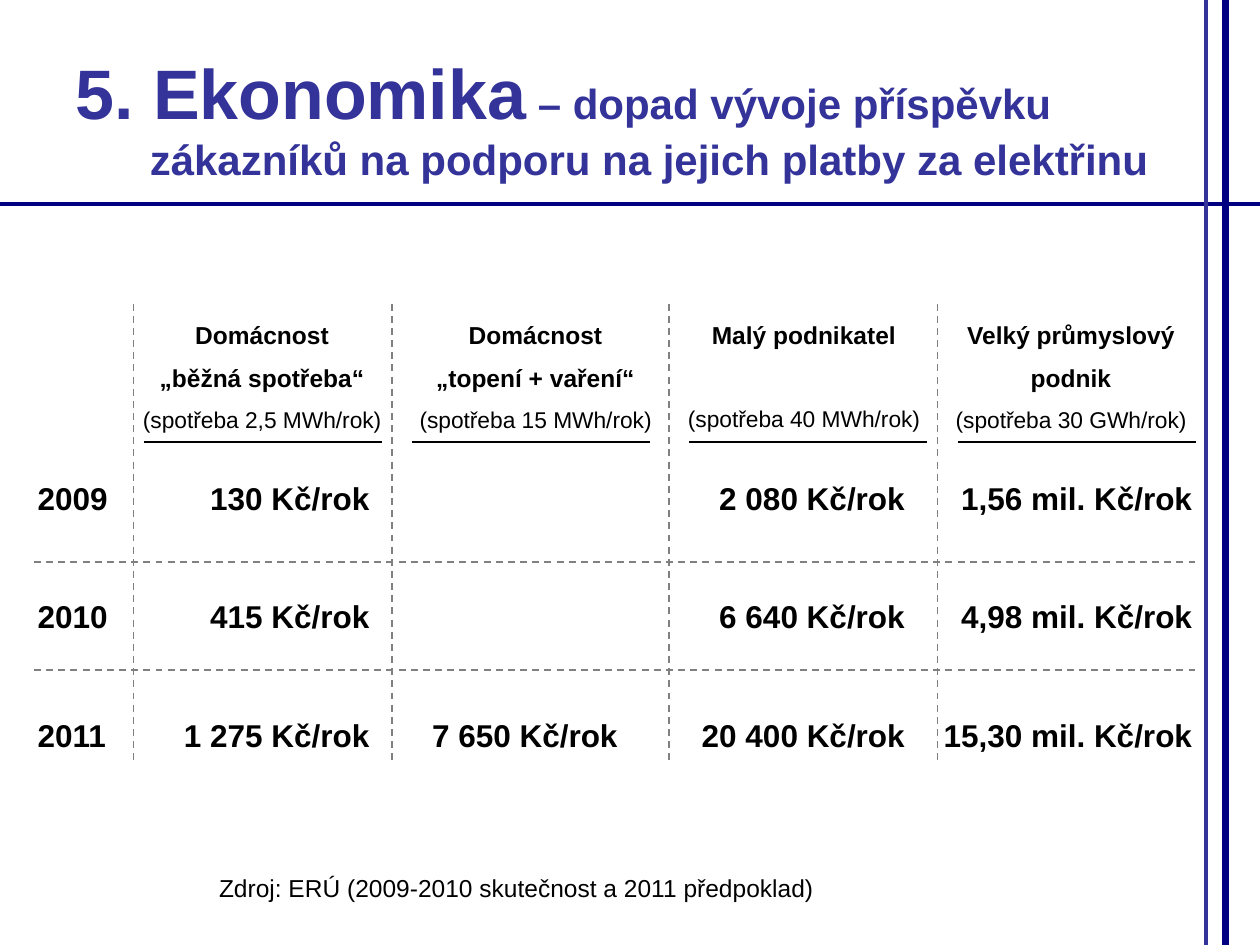
"""Build the slide on how support payments change customers' electricity bills."""
from pptx import Presentation
from pptx.dml.color import RGBColor as RGB
from pptx.enum.dml import MSO_LINE as Dash
from pptx.enum.shapes import MSO_CONNECTOR as Conn
from pptx.enum.text import MSO_ANCHOR as Anchor, PP_ALIGN as Align
from pptx.oxml.ns import qn
from pptx.util import Inches, Pt
from lxml.etree import SubElement

HUES = {"navy": "000080", "blue": "333399", "black": "000000", "gray": "808080"}

deck = Presentation()
deck.slide_width, deck.slide_height = Inches(10), Inches(7.5)
slide = deck.slides.add_slide(deck.slide_layouts[6])


def rule(x1, y1, x2, y2, hue, width=1, dash=None):
    line = slide.shapes.add_connector(Conn.STRAIGHT, *map(Inches, (x1, y1, x2, y2)))
    line.line.color.rgb = RGB.from_string(HUES[hue])
    line.line.width = Pt(width)
    if dash:
        line.line.dash_style = dash
    SubElement(line._element.spPr, qn("a:effectLst"))


def label(x, y, w, h, paras, align=Align.LEFT, hue="black"):
    frame = slide.shapes.add_textbox(*map(Inches, (x, y, w, h))).text_frame
    frame.word_wrap = True
    for i, (runs, gap) in enumerate(paras):
        para = frame.paragraphs[0] if i == 0 else frame.add_paragraph()
        para.alignment = align
        if gap:
            para.space_before = Pt(gap)
        for text, size, bold in runs:
            run = para.add_run()
            run.text = text
            form = {"name": "Arial", "size": Pt(size), "bold": bold}
            for key, value in form.items():
                setattr(run.font, key, value)
            run.font.color.rgb = RGB.from_string(HUES[hue])
    return frame


rule(0, 1.62, 10, 1.62, "navy", 2.5)
rule(9.57, 0, 9.57, 7.5, "blue", 2.5)
rule(9.73, 0, 9.73, 7.5, "navy", 4)

source = "Zdroj: ERÚ (2009-2010 skutečnost a 2011 předpoklad)"
label(1.64, 6.88, 7.93, 0.33, [([(source, 14, False)], 0)])

topic = " – dopad vývoje příspěvku zákazníků na podporu na jejich platby za elektřinu"
title = label(0.5, 0.3, 8.99, 1.25,
              [([("5. Ekonomika", 40, True), (topic, 24, True)], 0)], hue="blue")
title.vertical_anchor = Anchor.MIDDLE
props = title.paragraphs[0]._p.get_or_add_pPr()
props.set("marL", str(Inches(0.59)))
props.set("indent", str(-Inches(0.59)))

heads = [
    (0.98, 2.2, 1.14, ["Domácnost", "„běžná spotřeba“"], "2,5 MWh"),
    (3.11, 2.28, 3.27, ["Domácnost", "„topení + vaření“"], "15 MWh"),
    (5.24, 2.28, 5.47, ["Malý podnikatel"], "40 MWh"),
    (7.36, 2.28, 7.6, ["Velký průmyslový", "podnik"], "30 GWh"),
]
for x, width, start, names, use in heads:
    paras = [([(name, 14, True)], 8 * i) for i, name in enumerate(names)]
    gap = 7.5 + 24 * (2 - len(names))
    paras.append(([(f"(spotřeba {use}/rok)", 13, False)], gap))
    label(x, 2.49, width, 1.01, paras, Align.CENTER)
    rule(start, 3.51, start + 1.89, 3.51, "black")

cols = [(3.03, 1.81), (5, 1.81), (7.28, 1.97), (9.56, 2.28)]
rows = [
    ("2009", ["130", "", "2 080", "1,56 mil."]),
    ("2010", ["415", "", "6 640", "4,98 mil."]),
    ("2011", ["1 275", "7 650", "20 400", "15,30 mil."]),
]
for i, (year, costs) in enumerate(rows):
    y = 3.75 + 0.94 * i
    label(0.2, y, 0.79, 0.4, [([(year, 18, True)], 0)])
    for (right, width), cost in zip(cols, costs):
        if cost:
            label(right - width, y, width, 0.4,
                  [([(f"{cost} Kč/rok", 18, True)], 0)], Align.RIGHT)

for y in (4.46, 5.32):
    rule(0.27, y, 9.49, y, "gray", dash=Dash.DASH)
for x in (1.06, 3.11, 5.31, 7.44):
    rule(x, 2.41, x, 6.03, "gray", dash=Dash.DASH)

deck.save("out.pptx")
